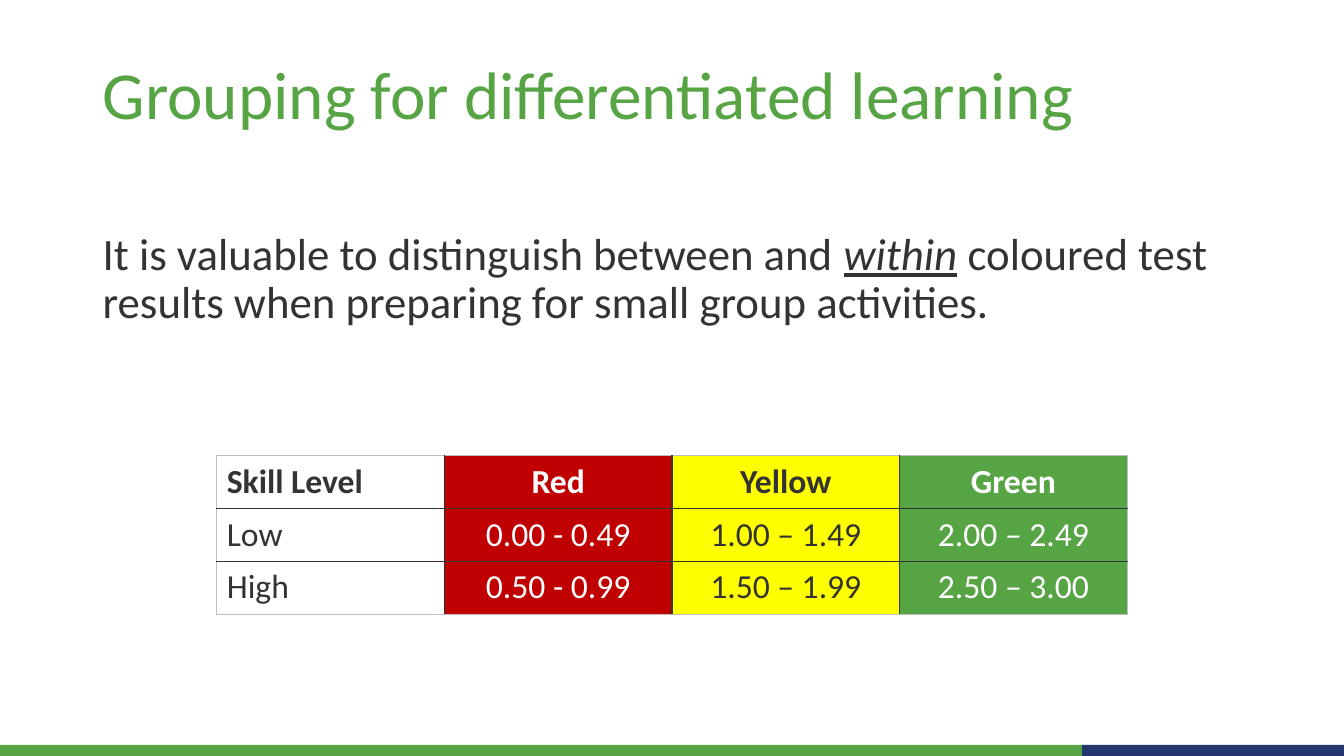
from lxml.etree import SubElement
from pptx import Presentation
from pptx.dml.color import RGBColor
from pptx.enum.shapes import MSO_SHAPE
from pptx.enum.text import MSO_ANCHOR, PP_ALIGN
from pptx.oxml.ns import qn
from pptx.util import Inches, Pt

GREEN = RGBColor(0x57, 0xA4, 0x45)
NAVY = RGBColor(0x24, 0x36, 0x70)
RED = RGBColor(0xC0, 0x00, 0x00)
YELLOW = RGBColor(0xFF, 0xFF, 0x00)
DARK = RGBColor(0x33, 0x33, 0x33)
GREY = RGBColor(0xBF, 0xBF, 0xBF)
WHITE = RGBColor(0xFF, 0xFF, 0xFF)
FONT = "Calibri"

SKILL_ROWS = [
    ["Skill Level", "Red", "Yellow", "Green"],
    ["Low", "0.00 - 0.49", "1.00 – 1.49", "2.00 – 2.49"],
    ["High", "0.50 - 0.99", "1.50 – 1.99", "2.50 – 3.00"],
]
COLUMN_STYLES = [(None, DARK), (RED, WHITE), (YELLOW, DARK), (GREEN, WHITE)]


def add_run(p, text, size, color=DARK, bold=False, italic=False, underline=False):
    r = p.add_run()
    r.text = text
    r.font.name = FONT
    r.font.size = Pt(size)
    r.font.color.rgb = color
    r.font.bold = bold
    r.font.italic = italic
    r.font.underline = underline


def add_bar(s, left, width, color):
    bar = s.shapes.add_shape(MSO_SHAPE.RECTANGLE, Inches(left), Inches(7.39),
                             Inches(width), Inches(0.11))
    bar.shadow.inherit = False
    bar.fill.solid()
    bar.fill.fore_color.rgb = color
    bar.line.fill.background()


def set_title(s, text):
    title = s.shapes.title
    title.left, title.top = Inches(0.92), Inches(0.45)
    title.width, title.height = Inches(11.5), Inches(0.88)
    tf = title.text_frame
    tf.vertical_anchor = MSO_ANCHOR.TOP
    p = tf.paragraphs[0]
    p.alignment = PP_ALIGN.LEFT
    p.line_spacing = 1.02
    add_run(p, text, 48, GREEN)


def add_body(s, runs):
    tf = s.shapes.add_textbox(Inches(0.92), Inches(2.25),
                              Inches(11.5), Inches(4.65)).text_frame
    tf.word_wrap = True
    p = tf.paragraphs[0]
    p.line_spacing = 0.9
    p.space_before = Pt(10)
    for text, emphasis in runs:
        add_run(p, text, 32, italic=emphasis, underline=emphasis)


def set_borders(cell, outer_sides):
    """Thin grey on the table's edge, dark between cells."""
    tc_pr = cell._tc.get_or_add_tcPr()
    for side in "LRTB":
        outer = side in outer_sides
        ln = SubElement(tc_pr, qn(f"a:ln{side}"), w=str(Pt(0.5 if outer else 1)))
        fill = SubElement(ln, qn("a:solidFill"))
        SubElement(fill, qn("a:srgbClr"), val=str(GREY if outer else DARK))


def add_skill_table(s):
    n_rows, n_cols = len(SKILL_ROWS), len(COLUMN_STYLES)
    table = s.shapes.add_table(n_rows, n_cols, Inches(2.15), Inches(4.52),
                               Inches(9.03), Inches(1.57)).table
    table.horz_banding = False
    for i, row in enumerate(SKILL_ROWS):
        for j, (text, (fill, color)) in enumerate(zip(row, COLUMN_STYLES)):
            cell = table.cell(i, j)
            cell.vertical_anchor = MSO_ANCHOR.MIDDLE
            edges = [("L", j == 0), ("R", j == n_cols - 1),
                     ("T", i == 0), ("B", i == n_rows - 1)]
            set_borders(cell, [side for side, at_edge in edges if at_edge])
            if fill is None:
                cell.fill.background()
            else:
                cell.fill.solid()
                cell.fill.fore_color.rgb = fill
            p = cell.text_frame.paragraphs[0]
            p.alignment = PP_ALIGN.CENTER if j else PP_ALIGN.LEFT
            add_run(p, text, 24, color, bold=i == 0)


def main():
    prs = Presentation()
    prs.slide_width, prs.slide_height = Inches(13.33), Inches(7.5)
    s = prs.slides.add_slide(prs.slide_layouts[5])

    # Footer bars
    add_bar(s, 10.73, 1.3, NAVY)
    add_bar(s, 12.03, 1.3, NAVY)
    add_bar(s, 0, 10.73, GREEN)

    # Skill ranges
    add_skill_table(s)

    # Title and message
    set_title(s, "Grouping for differentiated learning")
    add_body(s, [
        ("It is valuable to distinguish between and ", False),
        ("within", True),
        (" coloured test results when preparing for small group activities.", False),
    ])

    prs.save("out.pptx")


if __name__ == "__main__":
    main()
